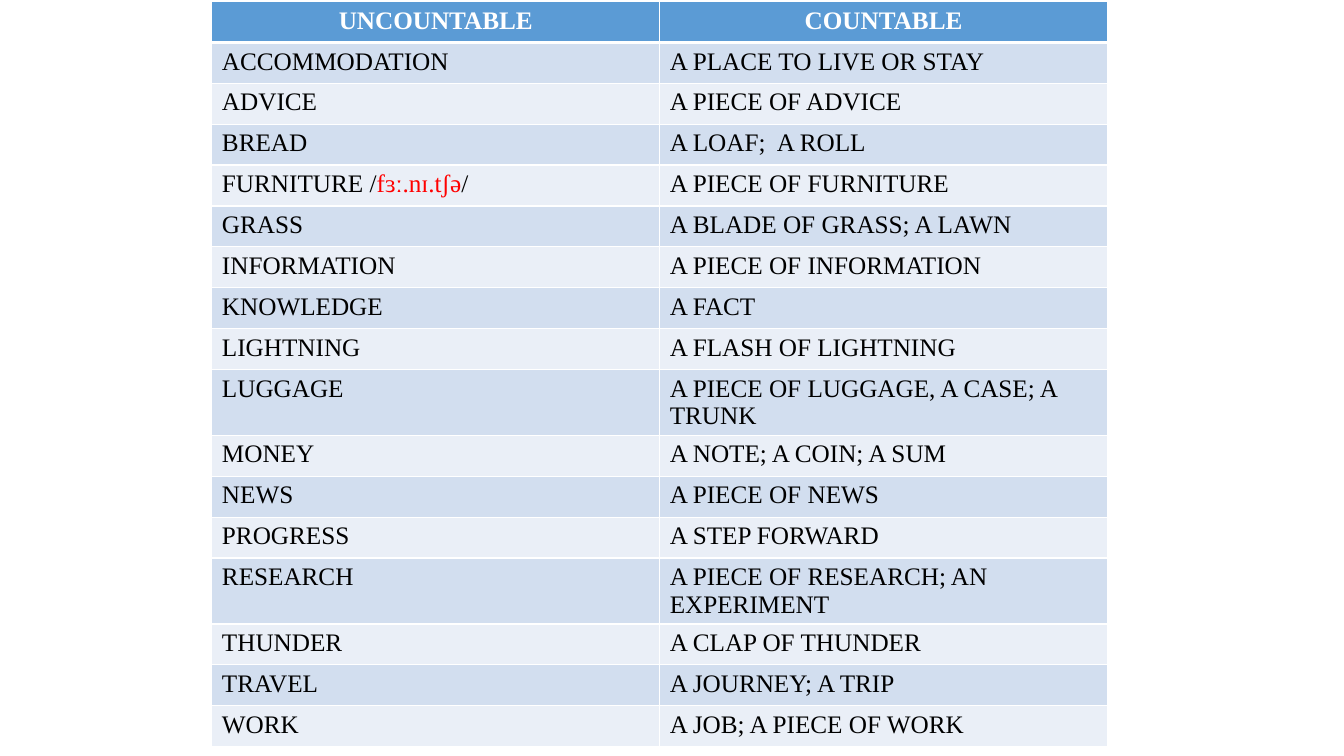
from dataclasses import dataclass

from lxml.etree import SubElement
from pptx import Presentation
from pptx.dml.color import RGBColor as Rgb
from pptx.enum.text import PP_ALIGN as Align
from pptx.oxml.ns import qn
from pptx.util import Cm, Pt


@dataclass(frozen=True)
class Theme:
    font: str = "Times New Roman"
    size: int = 18
    header_fill: str = "5B9BD5"
    bands: tuple = ("D2DEEF", "EAEFF7")
    header_text: str = "FFFFFF"
    text: str = "000000"
    phonetic: str = "FF0000"
    rule: str = "FFFFFF"
    thin: int = 1
    thick: int = 3


THEME = Theme()
HEADINGS = ("UNCOUNTABLE", "COUNTABLE")
PHONETIC = "fɜː.nɪ.tʃə"
NOUNS = [
    ("ACCOMMODATION", "A PLACE TO LIVE OR STAY"),
    ("ADVICE", "A PIECE OF ADVICE"),
    ("BREAD", "A LOAF;  A ROLL"),
    (f"FURNITURE /{PHONETIC}/", "A PIECE OF FURNITURE"),
    ("GRASS", "A BLADE OF GRASS; A LAWN"),
    ("INFORMATION", "A PIECE OF INFORMATION"),
    ("KNOWLEDGE", "A FACT"),
    ("LIGHTNING", "A FLASH OF LIGHTNING"),
    ("LUGGAGE", "A PIECE OF LUGGAGE, A CASE; A TRUNK"),
    ("MONEY", "A NOTE; A COIN; A SUM"),
    ("NEWS", "A PIECE OF NEWS"),
    ("PROGRESS", "A STEP FORWARD"),
    ("RESEARCH", "A PIECE OF RESEARCH; AN EXPERIMENT"),
    ("THUNDER", "A CLAP OF THUNDER"),
    ("TRAVEL", "A JOURNEY; A TRIP"),
    ("WORK", "A JOB; A PIECE OF WORK"),
]


def rule_cell(cell, top, bottom):
    properties = cell._tc.get_or_add_tcPr()
    widths = {"a:lnL": THEME.thin, "a:lnR": THEME.thin, "a:lnT": top, "a:lnB": bottom}
    for side, width in widths.items():
        line = SubElement(properties, qn(side), w=str(Pt(width)))
        fill = SubElement(line, qn("a:solidFill"))
        SubElement(fill, qn("a:srgbClr"), val=THEME.rule)


def write_cell(cell, words, color, bold):
    paragraph = cell.text_frame.paragraphs[0]
    before, phonetic, after = words.partition(PHONETIC)
    paragraph.text = before
    for part in filter(None, (phonetic, after)):
        paragraph.add_run().text = part
    for run in paragraph.runs:
        run.font.name = THEME.font
        run.font.size = Pt(THEME.size)
        run.font.bold = bold
        run.font.color.rgb = Rgb.from_string(THEME.phonetic if run.text == PHONETIC else color)
    return paragraph


def add_noun_table(slide, left, top, width, row_height):
    rows = [HEADINGS, *NOUNS]
    nouns = slide.shapes.add_table(
        len(rows), len(HEADINGS), left, top, width, row_height * len(rows)
    ).table
    for row_number, row in enumerate(rows):
        nouns.rows[row_number].height = row_height
        is_header = row_number == 0
        background = THEME.header_fill if is_header else THEME.bands[(row_number - 1) % 2]
        upper = THEME.thick if row_number == 1 else THEME.thin
        lower = THEME.thick if is_header else THEME.thin
        for column, words in enumerate(row):
            cell = nouns.cell(row_number, column)
            rule_cell(cell, upper, lower)
            cell.fill.solid()
            cell.fill.fore_color.rgb = Rgb.from_string(background)
            color = THEME.header_text if is_header else THEME.text
            paragraph = write_cell(cell, words, color, is_header)
            paragraph.alignment = Align.CENTER if is_header else Align.LEFT


def main():
    deck = Presentation()
    deck.slide_width, deck.slide_height = Cm(33.87), Cm(19.05)
    slide = deck.slides.add_slide(deck.slide_layouts[6])
    add_noun_table(slide, Cm(5.34), Cm(0.04), Cm(22.57), Cm(1.03))
    deck.save("out.pptx")


if __name__ == "__main__":
    main()
